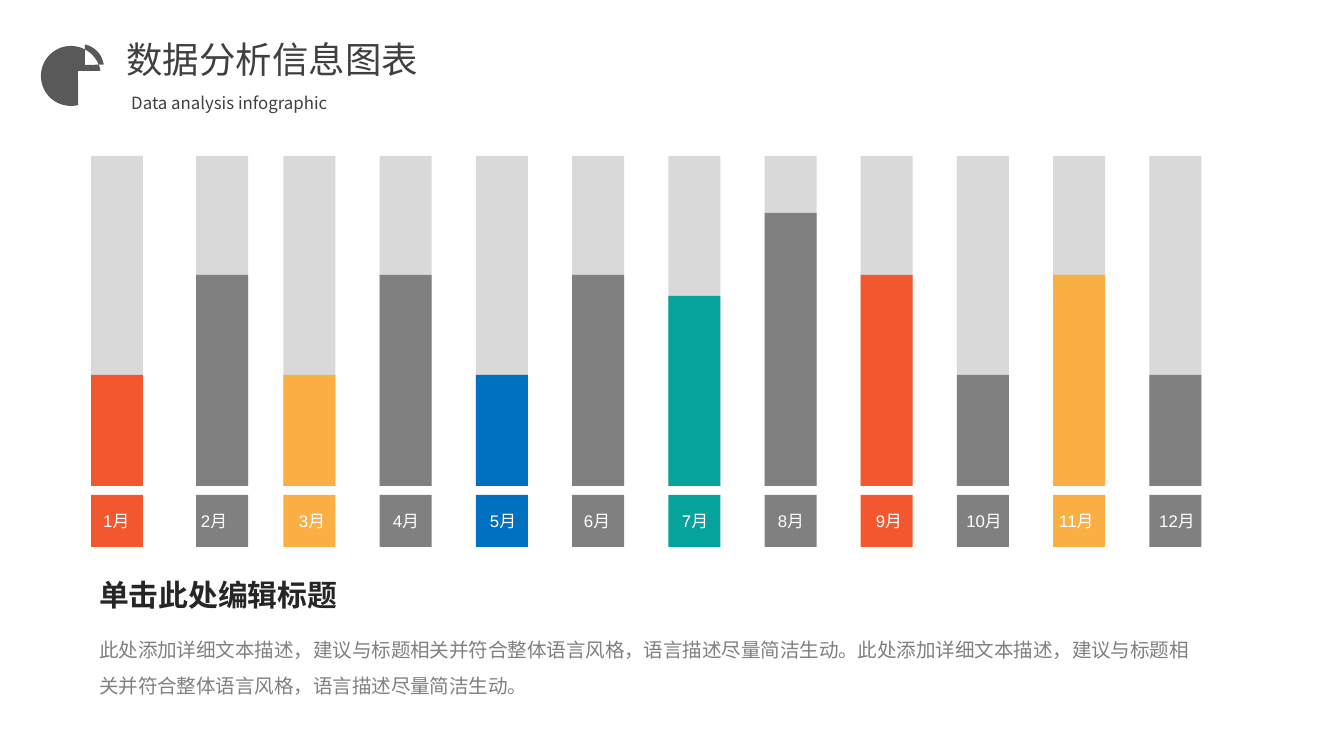
from math import cos, radians, sin

from lxml.etree import SubElement
from pptx import Presentation
from pptx.dml.color import RGBColor
from pptx.enum.shapes import MSO_SHAPE
from pptx.enum.text import MSO_AUTO_SIZE as AUTO, PP_ALIGN as ALIGN
from pptx.oxml.ns import qn
from pptx.util import Pt

SCALE = 914400 / 134.4
CJK = "Noto Sans CJK SC"
ORANGE, GREY, YELLOW, BLUE, TEAL = "F3572D", "808080", "F9AF44", "0070C0", "05A39C"
TRACK, WHITE, ICON, TITLE, HEADING = "D9D9D9", "FFFFFF", "595959", "404040", "262626"
BAR_WIDTH, BAR_TOP, BAR_BOTTOM = 52, 156, 486
MONTHS = [
    (ORANGE, 111, 90), (GREY, 211, 180), (YELLOW, 111, 278), (GREY, 211, 372),
    (BLUE, 111, 469), (GREY, 211, 563), (TEAL, 190, 661), (GREY, 273, 757),
    (ORANGE, 211, 855), (GREY, 111, 953), (YELLOW, 211, 1046), (GREY, 111, 1146),
]
LEFT_ALIGNED = (1, 10, 11, 12)
DESCRIPTION = (
    "此处添加详细文本描述，建议与标题相关并符合整体语言风格，语言描述尽量简洁生动。"
    "此处添加详细文本描述，建议与标题相关并符合整体语言风格，语言描述尽量简洁生动。"
)


def px(length):
    return round(length * SCALE)


def colour(code):
    return RGBColor.from_string(code)


def arc(centre_x, centre_y, radius, start, end):
    angles = [radians(start + (end - start) * step / 48) for step in range(49)]
    return [(px(centre_x + radius * cos(a)), px(centre_y + radius * sin(a))) for a in angles]


class Canvas:
    """Holds the slide's style and draws each kind of element on it."""

    def __init__(self, slide):
        self.slide = slide
        self.shapes = slide.shapes

    def start_group(self):
        self.shapes = self.slide.shapes.add_group_shape().shapes

    def end_group(self):
        self.shapes = self.slide.shapes

    def paint(self, shape, fill):
        shape.shadow.inherit = False
        shape.fill.solid()
        shape.fill.fore_color.rgb = colour(fill)
        shape.line.fill.background()

    def rect(self, left, top, width, height, fill):
        box = map(px, (left, top, width, height))
        self.paint(self.shapes.add_shape(MSO_SHAPE.RECTANGLE, *box), fill)

    def outline(self, contours, fill):
        builder = self.shapes.build_freeform(*contours[0][0])
        for contour in contours:
            builder.move_to(*contour[0])
            builder.add_line_segments(contour[1:], close=True)
        self.paint(builder.convert_to_shape(), fill)

    def text(self, box, words, size, fill, font="Arial", bold=False,
             align=ALIGN.LEFT, wrap=True, spacing=None, before=None):
        frame = self.shapes.add_textbox(*map(px, box)).text_frame
        frame.text = words
        frame.word_wrap = wrap
        frame.auto_size = AUTO.SHAPE_TO_FIT_TEXT
        paragraph = frame.paragraphs[0]
        paragraph.alignment = align
        paragraph.line_spacing = spacing
        paragraph.space_before = before
        for run in paragraph.runs:
            run.font.size = Pt(size)
            run.font.bold = bold
            run.font.color.rgb = colour(fill)
            run.font.name = font
            SubElement(run._r.get_or_add_rPr(), qn("a:ea"), typeface=CJK)


def draw_months(canvas):
    canvas.start_group()
    for month, (fill, height, label_left) in enumerate(MONTHS, 1):
        left = 91 + 96.22 * (month - 1) + (9 if month == 2 else 0)
        align = ALIGN.LEFT if month in LEFT_ALIGNED else ALIGN.CENTER
        canvas.rect(left, BAR_TOP, BAR_WIDTH, BAR_BOTTOM - BAR_TOP, TRACK)
        canvas.rect(left, BAR_BOTTOM - height, BAR_WIDTH, height, fill)
        canvas.rect(left, 495, BAR_WIDTH, BAR_WIDTH, fill)
        canvas.text((label_left, 504, 68, 34), f"{month}月", 9, WHITE, align=align)
    canvas.end_group()


def draw_pie_icon(canvas):
    notch = (px(78), px(71))
    wedge_corner = (px(85), px(65))
    canvas.outline([
        [notch] + arc(71, 76, 30, -10, -284),
        [wedge_corner] + arc(80, 68, 24, -78, -8),
    ], ICON)


def main():
    deck = Presentation()
    deck.slide_width, deck.slide_height = px(1344), px(756)
    canvas = Canvas(deck.slides.add_slide(deck.slide_layouts[6]))
    draw_months(canvas)
    canvas.text((86, 620, 1128, 85), DESCRIPTION, 10.5, GREY, spacing=1.5, before=Pt(2))
    canvas.text((86, 563, 270, 56), "单击此处编辑标题", 16, HEADING, bold=True,
                spacing=1.2, before=Pt(3))
    canvas.text((113, 31, 321, 58), "数据分析信息图表", 19.5, TITLE, font=CJK, wrap=False)
    draw_pie_icon(canvas)
    canvas.text((118, 86, 239, 34), "Data analysis infographic", 9, TITLE, font=CJK, wrap=False)
    deck.save("out.pptx")


if __name__ == "__main__":
    main()
